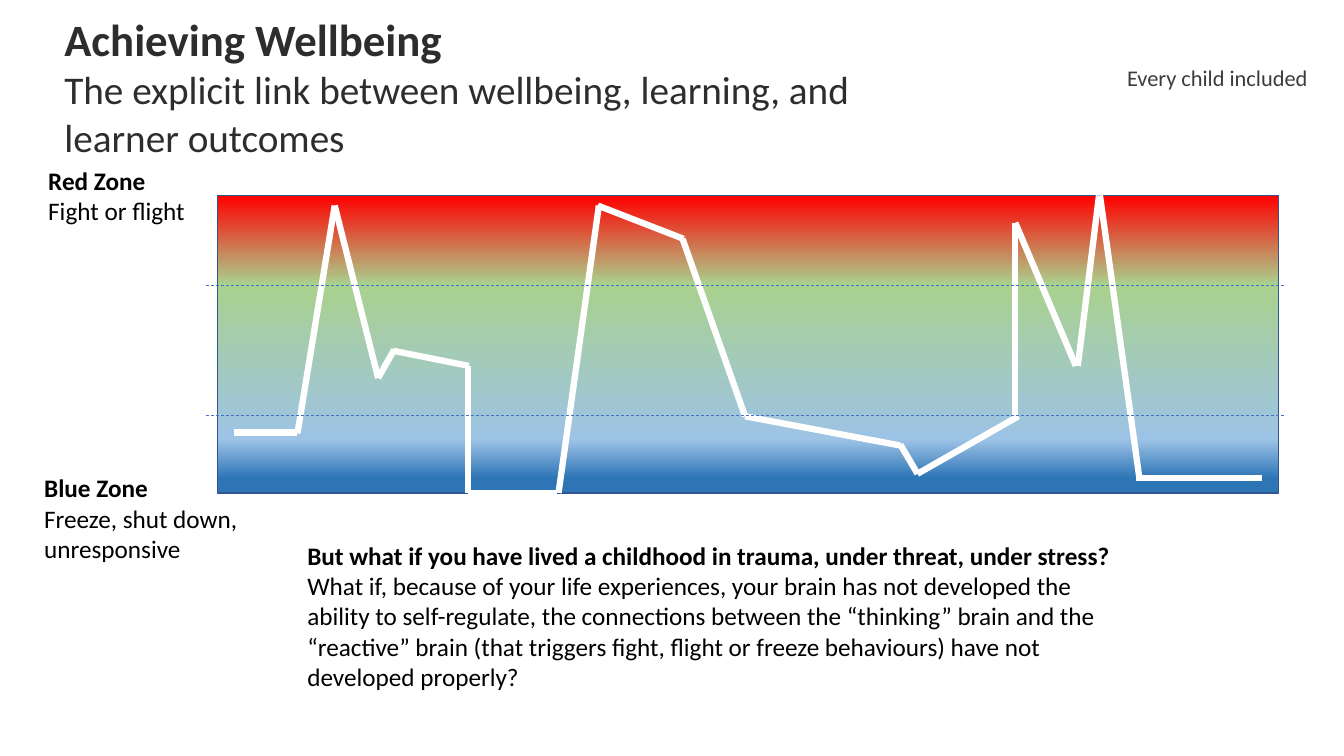
from dataclasses import dataclass

import pptx
import pptx.dml.color
import pptx.enum.dml
import pptx.enum.shapes
import pptx.enum.text
import pptx.oxml
import pptx.oxml.ns
import pptx.slide
import pptx.util
from lxml import etree

EMU_PER_PX = 9144  # 100 px to the inch
FONT = "Calibri"


@dataclass(frozen=True)
class Run:
    text: str
    size: int = 18
    bold: bool = False
    color: str = "000000"


@dataclass(frozen=True)
class TextBlock:
    left: int
    top: int
    width: int
    height: int
    paragraphs: list[list[Run]]


@dataclass(frozen=True)
class Segment:
    x1: int
    y1: int
    x2: int
    y2: int


TEXT_BLOCKS = [
    TextBlock(1108, 59, 225, 37, [[Run("Every child included", size=16, color="3C3C3C")]]),
    TextBlock(38, 159, 174, 71, [[Run("Red Zone", bold=True)], [Run("Fight or flight")]]),
    TextBlock(34, 464, 244, 101, [
        [Run("Blue Zone", bold=True)],
        [Run("Freeze, shut down, unresponsive")],
    ]),
    TextBlock(295, 531, 835, 162, [[
        Run("But what if you have lived a childhood in trauma, under threat, under stress? ",
            bold=True),
        Run("What if, because of your life experiences, your brain has not developed the "
            "ability to self-regulate, the connections between the “thinking” brain and the "
            "“reactive” brain (that triggers fight, flight or freeze behaviours) have not "
            "developed properly?"),
    ]]),
    TextBlock(54, 7, 866, 123, [
        [Run("Achieving Wellbeing", size=32, bold=True, color="2D2D2D")],
        [Run("The explicit link between wellbeing, learning, and learner outcomes",
             size=28, color="2D2D2D")],
    ]),
]

ZONE_STOPS = [(0, "FF0000"), (30, "A9D18E"), (82, "9DC3E6"), (95, "2E75B6")]
ZONE_BOUNDARIES = [283, 412]

STRESS_TRACE = [
    Segment(232, 429, 295, 429),
    Segment(295, 430, 332, 204),
    Segment(375, 375, 332, 204),
    Segment(375, 375, 391, 347),
    Segment(390, 348, 465, 363),
    Segment(464, 363, 464, 489),
    Segment(464, 489, 552, 489),
    Segment(554, 489, 594, 204),
    Segment(593, 204, 678, 237),
    Segment(677, 237, 739, 413),
    Segment(739, 413, 893, 442),
    Segment(893, 441, 910, 470),
    Segment(910, 470, 1010, 413),
    Segment(1007, 413, 1007, 221),
    Segment(1007, 221, 1067, 363),
    Segment(1069, 363, 1090, 194),
    Segment(1091, 194, 1130, 474),
    Segment(1127, 474, 1252, 474),
]


def px(length: int) -> pptx.util.Emu:
    return pptx.util.Emu(length * EMU_PER_PX)


def rgb(code: str) -> pptx.dml.color.RGBColor:
    return pptx.dml.color.RGBColor.from_string(code)


def add_run(para, text: str, *, size: int, bold: bool, color: str) -> None:
    span = para.add_run()
    span.text = text
    span.font.name = FONT
    span.font.size = pptx.util.Pt(size)
    span.font.bold = bold
    span.font.color.rgb = rgb(color)


def add_text_block(page: pptx.slide.Slide, block: TextBlock) -> None:
    box = page.shapes.add_textbox(
        px(block.left), px(block.top), px(block.width), px(block.height))
    frame = box.text_frame
    frame.word_wrap = True
    frame.vertical_anchor = pptx.enum.text.MSO_ANCHOR.TOP
    for index, runs in enumerate(block.paragraphs):
        para = frame.add_paragraph() if index else frame.paragraphs[0]
        for run in runs:
            add_run(para, run.text, size=run.size, bold=run.bold, color=run.color)


def add_zone_band(page: pptx.slide.Slide) -> None:
    """Draw the rectangle that fades from the red zone down to the blue zone."""
    band = page.shapes.add_shape(
        pptx.enum.shapes.MSO_SHAPE.RECTANGLE, px(216), px(194), px(1052), px(295))
    band.shadow.inherit = False
    band.line.color.rgb = rgb("325491")
    band.line.width = pptx.util.Pt(1)
    band.fill.gradient()
    band.fill.gradient_angle = 270
    qn = pptx.oxml.ns.qn
    stops = next(band._element.spPr.iter(qn("a:gsLst")))
    for stop in list(stops):
        stops.remove(stop)
    for percent, color in ZONE_STOPS:
        stop = etree.SubElement(stops, qn("a:gs"), pos=str(percent * 1000))
        etree.SubElement(stop, qn("a:srgbClr"), val=color)


def add_line(page: pptx.slide.Slide, segment: Segment, *, color: str, width: float,
             dashed: bool = False) -> None:
    line = page.shapes.add_connector(
        pptx.enum.shapes.MSO_CONNECTOR.STRAIGHT,
        px(segment.x1), px(segment.y1), px(segment.x2), px(segment.y2))
    line.line.color.rgb = rgb(color)
    line.line.width = pptx.util.Pt(width)
    if dashed:
        line.line.dash_style = pptx.enum.dml.MSO_LINE.DASH
    etree.SubElement(line._element.spPr, pptx.oxml.ns.qn("a:effectLst"))


def main() -> None:
    deck = pptx.Presentation()
    deck.slide_width, deck.slide_height = px(1333), px(750)
    page = deck.slides.add_slide(deck.slide_layouts[6])
    add_zone_band(page)
    for segment in STRESS_TRACE:
        add_line(page, segment, color="FFFFFF", width=4.5)
    for y in ZONE_BOUNDARIES:
        add_line(page, Segment(204, y, 1275, y), color="4472C4", width=0.5, dashed=True)
    for block in TEXT_BLOCKS:
        add_text_block(page, block)
    deck.save("out.pptx")


if __name__ == "__main__":
    main()
